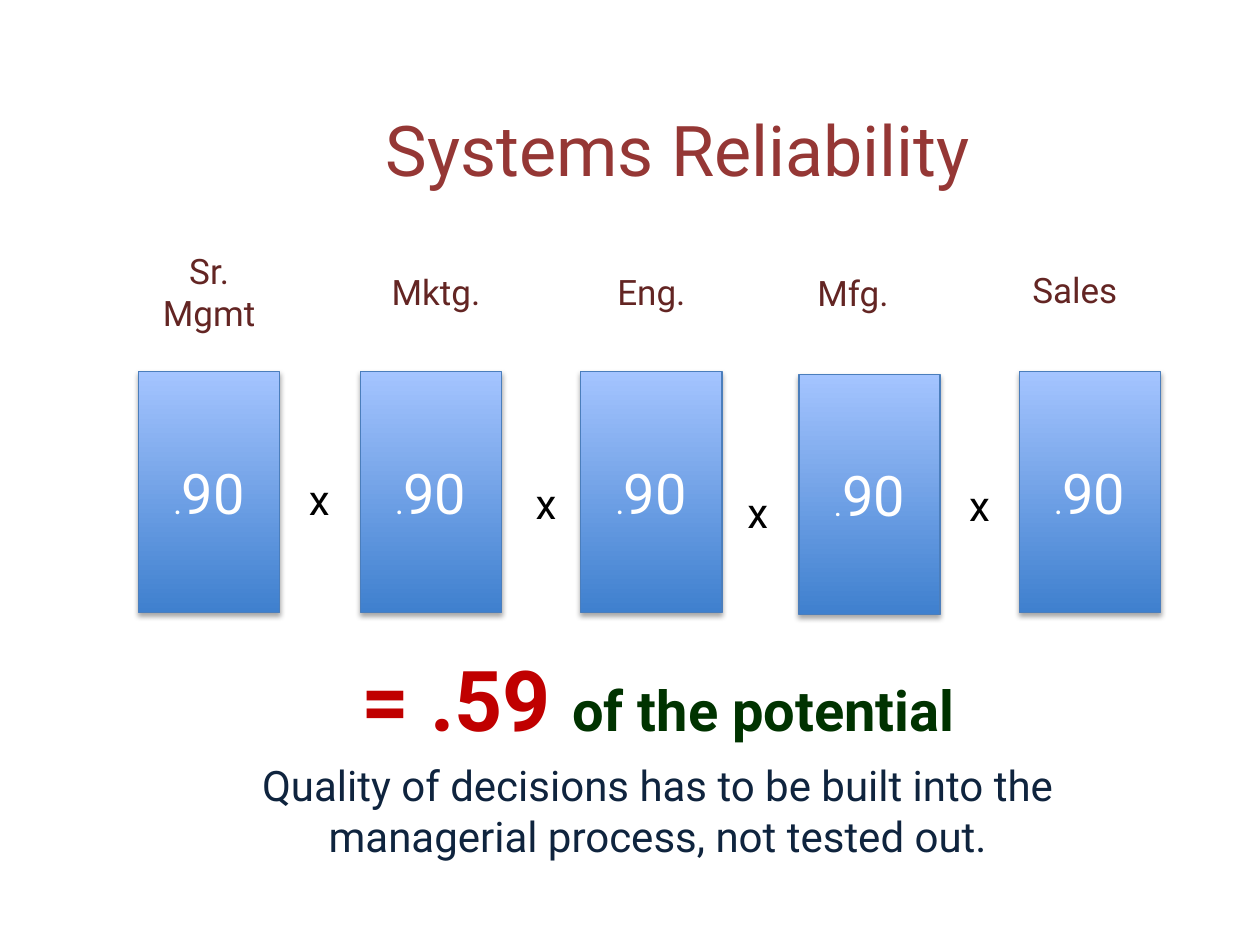
from dataclasses import dataclass

from lxml import etree
from pptx import Presentation
from pptx.dml.color import RGBColor
from pptx.enum import shapes, text
from pptx.oxml import ns
from pptx.util import Inches, Pt

COLORS = {
    "title": "953735",
    "label": "632523",
    "box_bottom": "3F80CE",
    "box_top": "A4C4FF",
    "box_line": "4B7EBC",
    "white": "FFFFFF",
    "black": "000000",
    "result": "C00000",
    "potential": "003300",
    "moral": "0F243E",
}
BOX_WIDTH, BOX_HEIGHT = 1.12, 1.91
LABEL_HEIGHT = 1.25
SIGN_WIDTH, SIGN_HEIGHT = 0.63, 0.51


@dataclass(frozen=True)
class Run:
    words: str
    size: float
    color: str
    bold: bool = False
    font: str = "Roboto"


@dataclass(frozen=True)
class Department:
    name: str
    box_left: float
    box_top: float
    label_left: float
    label_top: float
    point_font: str = "Calibri"


@dataclass(frozen=True)
class Sign:
    left: float
    top: float


DEPARTMENTS = [
    Department("Sr. Mgmt", 1.1, 2.95, 1.1, 1.69),
    Department("Mktg.", 2.86, 2.95, 2.9, 1.69),
    Department("Eng.", 4.61, 2.95, 4.61, 1.69),
    Department("Mfg.", 6.34, 2.97, 6.21, 1.7, "Roboto"),
    Department("Sales", 8.09, 2.95, 7.97, 1.67),
]
SIGNS = [Sign(2.22, 3.71), Sign(4.02, 3.74), Sign(5.7, 3.81), Sign(7.46, 3.76)]


def rgb(name: str) -> RGBColor:
    return RGBColor.from_string(COLORS[name])


def write(shape, runs: list[Run], anchor) -> None:
    frame = shape.text_frame
    frame.word_wrap = True
    frame.vertical_anchor = anchor
    paragraph = frame.paragraphs[0]
    paragraph.alignment = text.PP_ALIGN.CENTER
    for item in runs:
        run = paragraph.add_run()
        run.text = item.words
        run.font.name = item.font
        run.font.size = Pt(item.size)
        run.font.bold = item.bold
        run.font.color.rgb = rgb(item.color)


def add_text(slide, left: float, top: float, width: float, height: float,
             runs: list[Run], anchor=text.MSO_ANCHOR.TOP) -> None:
    shape = slide.shapes.add_textbox(
        Inches(left), Inches(top), Inches(width), Inches(height))
    write(shape, runs, anchor)


def add_shadow(shape) -> None:
    shape.shadow.inherit = False
    effects = shape._element.spPr.find(ns.qn("a:effectLst"))
    shadow = etree.SubElement(
        effects, ns.qn("a:outerShdw"), blurRad=str(Pt(3.1)),
        dist=str(Pt(1.8)), dir="5400000", rotWithShape="0")
    color = etree.SubElement(shadow, ns.qn("a:srgbClr"), val=COLORS["black"])
    etree.SubElement(color, ns.qn("a:alpha"), val="35000")


def add_department(slide, department: Department) -> None:
    box = slide.shapes.add_shape(
        shapes.MSO_SHAPE.RECTANGLE,
        Inches(department.box_left), Inches(department.box_top),
        Inches(BOX_WIDTH), Inches(BOX_HEIGHT))
    box.fill.gradient()
    box.fill.gradient_angle = 90
    for stop, name in zip(box.fill.gradient_stops, ("box_bottom", "box_top")):
        stop.color.rgb = rgb(name)
    box.line.color.rgb = rgb("box_line")
    box.line.width = Pt(0.75)
    add_shadow(box)
    write(box, [Run(".", 18, "white", font=department.point_font),
                Run("90", 32, "white")], text.MSO_ANCHOR.MIDDLE)
    add_text(slide, department.label_left, department.label_top,
             BOX_WIDTH, LABEL_HEIGHT,
             [Run(department.name, 20, "label")], text.MSO_ANCHOR.MIDDLE)


def main() -> None:
    presentation = Presentation()
    presentation.slide_width = Inches(10)
    presentation.slide_height = Inches(7.5)
    slide = presentation.slides.add_slide(presentation.slide_layouts[6])

    add_text(slide, 0.88, 0.55, 9, 1.25,
             [Run("Systems Reliability", 40, "title")], text.MSO_ANCHOR.MIDDLE)
    for department in DEPARTMENTS:
        add_department(slide, department)
    for sign in SIGNS:
        add_text(slide, sign.left, sign.top, SIGN_WIDTH, SIGN_HEIGHT,
                 [Run("x", 24, "black")])
    add_text(slide, 1.8, 5.09, 6.85, 0.91,
             [Run("= .59 ", 48, "result", True),
              Run("of the potential", 32, "potential", True)])
    add_text(slide, 1.23, 5.98, 7.98, 0.91,
             [Run("Quality of decisions has to be built into the managerial "
                  "process, not tested out.", 24, "moral")])

    presentation.save("out.pptx")


if __name__ == "__main__":
    main()
